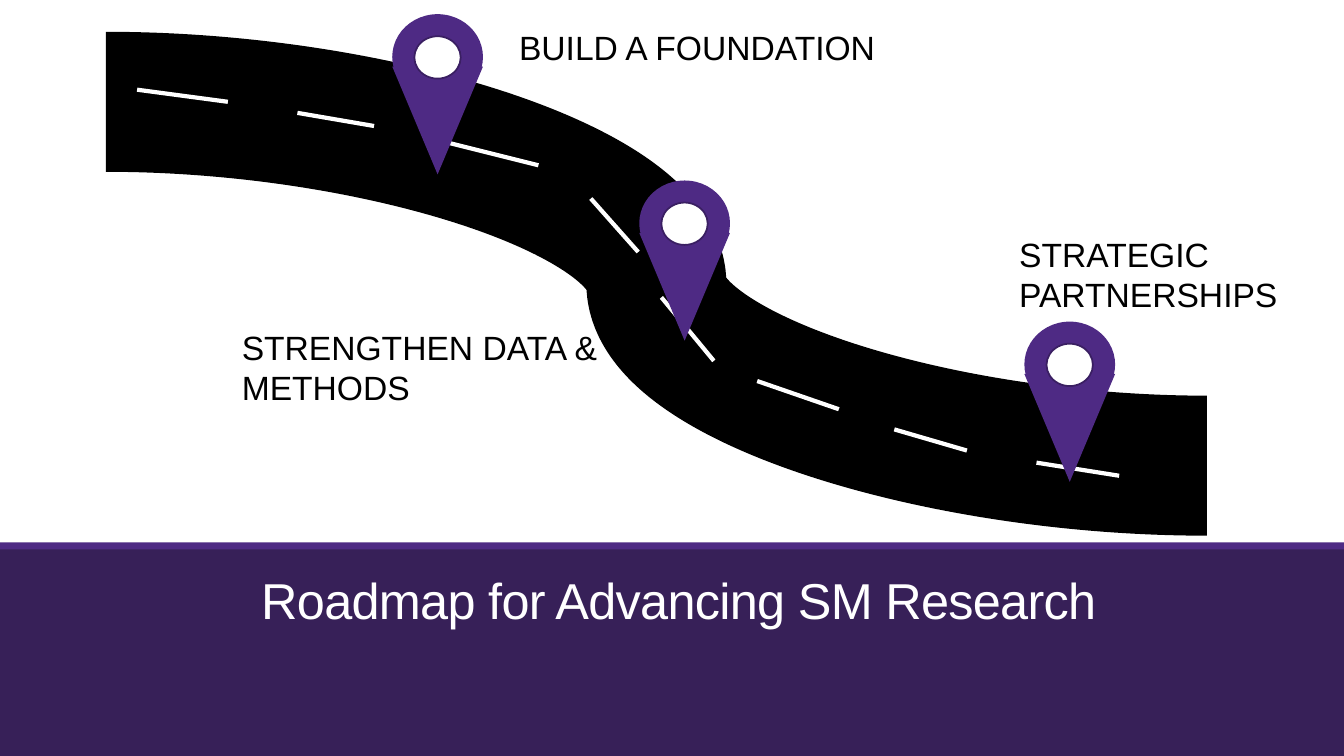
from pptx import Presentation
from pptx.dml.color import RGBColor
from pptx.enum.shapes import MSO_CONNECTOR as CONN, MSO_SHAPE as SHAPE
from pptx.enum.text import MSO_ANCHOR as ANCHOR, PP_ALIGN as ALIGN
from pptx.oxml.ns import qn
from pptx.util import Inches, Pt
from lxml import etree

BLACK, WHITE = "000000", "FFFFFF"
PURPLE, DARK_PURPLE, OUTLINE = "4E2A84", "372058", "3A1F62"


def color(value):
    return RGBColor.from_string(value)


def add_filled(kind, box, fill, rotation=0):
    """Add a preset shape with a plain fill and no outline."""
    sp = s.shapes.add_shape(kind, *map(Inches, box))
    sp.shadow.inherit = False
    sp.fill.solid()
    sp.fill.fore_color.rgb = color(fill)
    sp.line.fill.background()
    sp.rotation = rotation
    return sp


prs = Presentation()
prs.slide_width, prs.slide_height = Inches(13.33), Inches(7.5)
s = prs.slides.add_slide(prs.slide_layouts[6])

# Title band
add_filled(SHAPE.RECTANGLE, (0, 5.42, 13.33, 2.08), DARK_PURPLE)
add_filled(SHAPE.RECTANGLE, (0, 5.38, 13.33, 0.07), PURPLE)

# Road and its dashes: kind, from x, from y, to x, to y, colour, width
dashes = [
    (1.36, 0.89, 2.26, 1.01),
    (2.95, 1.12, 3.71, 1.25),
    (4.46, 1.42, 5.34, 1.64),
    (5.86, 1.97, 6.33, 2.5),
    (6.56, 2.95, 7.08, 3.58),
    (7.51, 3.78, 8.32, 4.06),
    (8.87, 4.26, 9.59, 4.47),
    (10.28, 4.59, 11.1, 4.72),
]
road = (CONN.CURVE, (1.05, 1.01, 11.97, 4.62), BLACK, 100)
for kind, ends, line_color, width in [road] + [(CONN.STRAIGHT, d, WHITE, 3) for d in dashes]:
    line = s.shapes.add_connector(kind, *map(Inches, ends))
    line.line.color.rgb = color(line_color)
    line.line.width = Pt(width)
    etree.SubElement(line._element.spPr, qn("a:effectLst"))

# Map pins
for x, y in [(3.89, 0.14), (10.16, 3.19), (6.34, 1.79)]:
    add_filled(SHAPE.OVAL, (x, y, 0.9, 0.85), PURPLE, 180)
    add_filled(SHAPE.ISOSCELES_TRIANGLE, (x, y + 0.52, 0.9, 1.07), PURPLE, 180)
    hole = add_filled(SHAPE.OVAL, (x + 0.22, y + 0.22, 0.46, 0.42), WHITE)
    hole.line.color.rgb = color(OUTLINE)
    hole.line.width = Pt(1.25)

# Milestone labels and title
texts = [
    ("BUILD A FOUNDATION", (5.05, 0.22, 3.83, 0.5), 24, BLACK),
    ("STRENGTHEN DATA & METHODS", (2.3, 3.19, 3.97, 0.91), 24, BLACK),
    ("STRATEGIC PARTNERSHIPS", (10.01, 2.27, 3.15, 0.91), 24, BLACK),
    ("Roadmap for Advancing SM Research", (1.2, 5.35, 11.06, 0.9), 36, WHITE),
]
for text, box, size, text_color in texts:
    tf = s.shapes.add_textbox(*map(Inches, box)).text_frame
    tf.word_wrap = True
    p = tf.paragraphs[0]
    r = p.add_run()
    r.text = text
    r.font.name, r.font.size = "Arial", Pt(size)
    r.font.color.rgb = color(text_color)

# The title is the last text added
tf.vertical_anchor = ANCHOR.BOTTOM
tf.margin_top = tf.margin_bottom = 0
p.alignment, p.line_spacing = ALIGN.CENTER, 0.85
r._r.get_or_add_rPr().set("spc", "-50")

prs.save("out.pptx")
